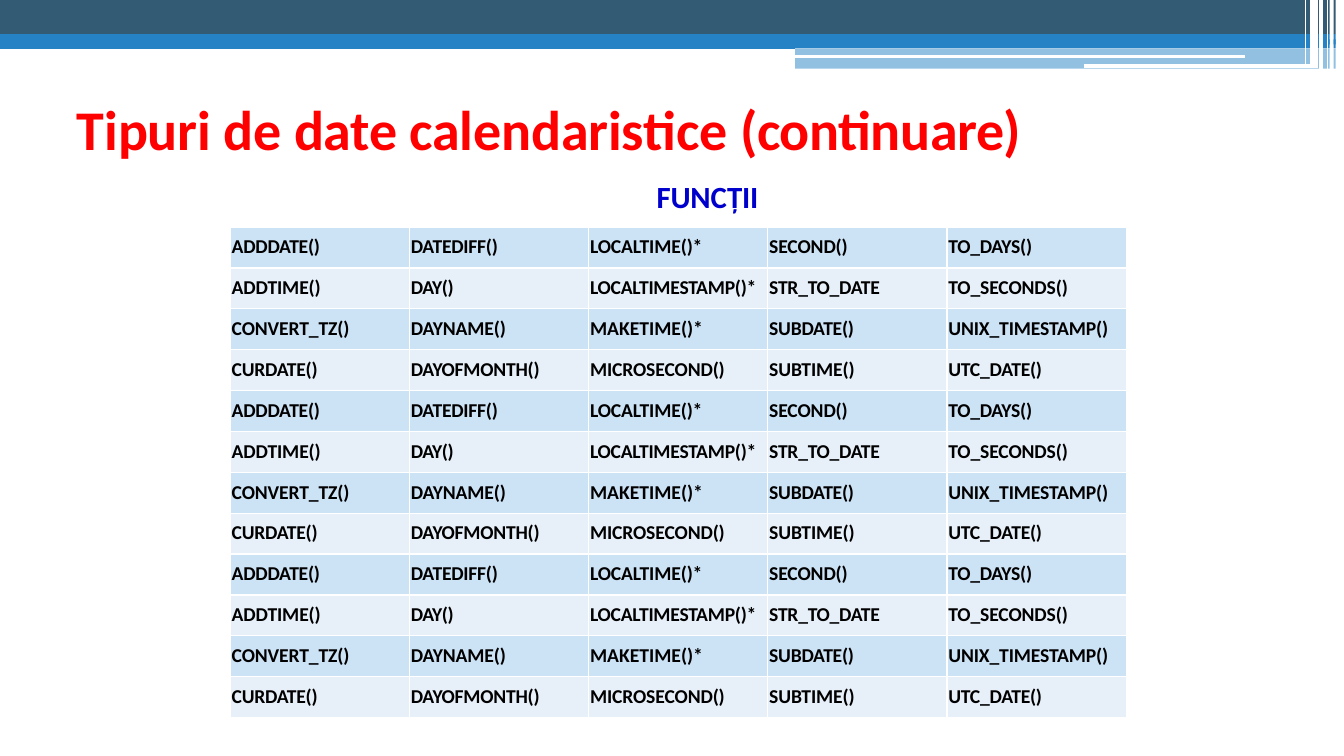
import pptx
import pptx.util
import pptx.dml.color
import pptx.enum.shapes
import pptx.enum.text
import pptx.oxml.ns
from lxml import etree

Pt = pptx.util.Pt
qn = pptx.oxml.ns.qn


def color(hex_value):
    return pptx.dml.color.RGBColor.from_string(hex_value)


def add_text(paragraph, text, size, hex_value, spacing):
    run = paragraph.add_run()
    run.text = text
    run.font.name = "Calibri"
    run.font.size = Pt(size)
    run.font.bold = True
    run.font.color.rgb = color(hex_value)
    run._r.get_or_add_rPr().set("spc", str(spacing))


deck = pptx.Presentation()
deck.slide_width, deck.slide_height = Pt(960), Pt(540)
slide = deck.slides.add_slide(deck.slide_layouts[6])

bands = [
    (0, 0, 24.5, "335B74", None),
    (0, 24.5, 7.2, "2583C5", None),
    (568, 28.1, 6.4, "2583C5", None),
    (568, 34.5, 14.5, "2583C5", 50000),
]
for left, top, height, hue, alpha in bands:
    for start, end in ((left, 949.7), (952.6, 954)):
        band = slide.shapes.add_shape(
            pptx.enum.shapes.MSO_SHAPE.RECTANGLE,
            Pt(start), Pt(top), Pt(end - start), Pt(height))
        band.shadow.inherit = False
        band.line.fill.background()
        band.fill.solid()
        band.fill.fore_color.rgb = color(hue)
        if alpha:
            tint = band._element.spPr.find(".//" + qn("a:srgbClr"))
            etree.SubElement(tint, qn("a:alpha")).set("val", str(alpha))

stripes = [
    (0, 33.1, 568, 33.1, "2583C5", 4.08),
    (567.4, 40.3, 889.2, 40.3, "FFFFFF", 2.16),
    (774, 47.5, 941.8, 47.5, "FFFFFF", 2.88),
    (948.2, 0, 948.2, 49, "FFFFFF", 0.96),
    (943.9, 0, 943.9, 49, "FFFFFF", 2.88),
    (938.9, 0, 938.9, 46.1, "FFFFFF", 5.75),
    (932.4, 0, 932.4, 46.1, "FFFFFF", 0.96),
]
for x1, y1, x2, y2, hue, weight in stripes:
    stripe = slide.shapes.add_connector(
        pptx.enum.shapes.MSO_CONNECTOR.STRAIGHT, Pt(x1), Pt(y1), Pt(x2), Pt(y2))
    stripe.line.color.rgb = color(hue)
    stripe.line.width = Pt(weight)
    etree.SubElement(stripe._element.spPr, qn("a:effectLst"))

headings = [
    (468, 125.3, 75.6, 28, 22, "0000CC", [("FUN", -10), ("C", 10), ("ȚII", -10)]),
    (54, 66.2, 707.8, 49.7, 40, "FF0000",
     [("Tipuri de ", -10), ("date ", -20), ("calendaristice ", -10), ("(continuare)", -30)]),
]
for left, top, width, height, size, hue, pieces in headings:
    heading = slide.shapes.add_textbox(Pt(left), Pt(top), Pt(width), Pt(height)).text_frame
    heading.word_wrap = True
    heading.auto_size = pptx.enum.text.MSO_AUTO_SIZE.SHAPE_TO_FIT_TEXT
    heading.margin_left, heading.margin_top = Pt(1), Pt(1.6)
    heading.margin_right = heading.margin_bottom = 0
    for text, spacing in pieces:
        add_text(heading.paragraphs[0], text, size, hue, spacing)

functions = [
    [("ADDDATE()", -20), ("DATEDIFF()", -20), ("LOCALTIME()*", -10),
     ("SECOND()", -10), ("TO_DAYS()", -20)],
    [("ADDTIME()", -10), ("DAY()", -30), ("LOCALTIMESTAMP()*", -20),
     ("STR_TO_DATE", -20), ("TO_SECONDS()", -10)],
    [("CONVERT_TZ()", -10), ("DAYNAME()", -10), ("MAKETIME()*", 0),
     ("SUBDATE()", -20), ("UNIX_TIMESTAMP()", -10)],
    [("CURDATE()", -20), ("DAYOFMONTH()", -20), ("MICROSECOND()", -10),
     ("SUBTIME()", -10), ("UTC_DATE()", -20)],
] * 3
grid = slide.shapes.add_table(
    len(functions), 5, Pt(164.5), Pt(162.2), Pt(640), Pt(350.4)).table
grid.first_row = grid.horz_banding = False
for column in grid.columns:
    column.width = Pt(128)
for row_index, names in enumerate(functions):
    grid.rows[row_index].height = Pt(29.2)
    for column_index, (name, spacing) in enumerate(names):
        cell = grid.cell(row_index, column_index)
        cell.margin_left, cell.margin_top = Pt(1), Pt(5.8)
        cell.margin_right = cell.margin_bottom = 0
        for side in ("a:lnL", "a:lnR", "a:lnT", "a:lnB"):
            border = etree.SubElement(cell._tc.get_or_add_tcPr(), qn(side), w=str(Pt(1)))
            paint = etree.SubElement(border, qn("a:solidFill"))
            etree.SubElement(paint, qn("a:srgbClr"), val="FFFFFF")
        cell.fill.solid()
        cell.fill.fore_color.rgb = color("E7F0F9" if row_index % 2 else "CCE2F5")
        add_text(cell.text_frame.paragraphs[0], name, 14, "000000", spacing)

deck.save("out.pptx")
